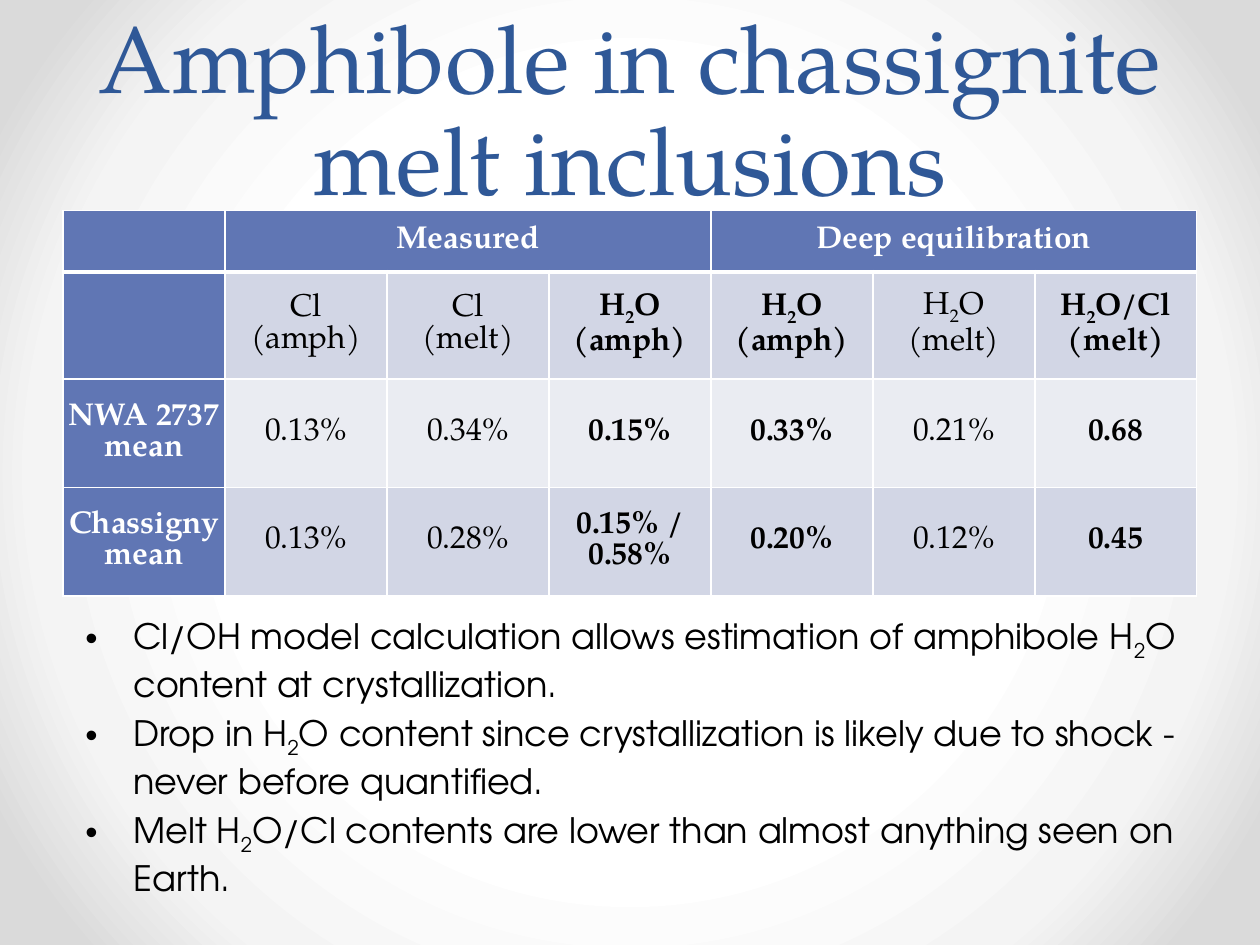
from typing import NamedTuple

from lxml import etree
from pptx import Presentation
from pptx.dml.color import RGBColor
from pptx.enum.text import MSO_ANCHOR, PP_ALIGN
from pptx.oxml import parse_xml
from pptx.oxml.ns import qn
from pptx.util import Inches, Pt

CENTER = PP_ALIGN.CENTER
TOP, MIDDLE, BOTTOM = MSO_ANCHOR.TOP, MSO_ANCHOR.MIDDLE, MSO_ANCHOR.BOTTOM

WHITE = RGBColor(0xFF, 0xFF, 0xFF)
BLACK = RGBColor(0, 0, 0)
TITLE_BLUE = RGBColor(0x2F, 0x58, 0x97)
HEAD_BLUE = RGBColor(0x60, 0x76, 0xB4)
BAND_DARK = RGBColor(0xD2, 0xD6, 0xE5)
BAND_LIGHT = RGBColor(0xEA, 0xEC, 0xF2)

SERIF, SANS = "TeX Gyre Pagella", "TeX Gyre Adventor"
BACKDROP = ((50, WHITE), (76, RGBColor(0xF4, 0xF4, 0xF4)), (92, RGBColor(0xDA, 0xDA, 0xDA)))


class Box(NamedTuple):
    left: float
    top: float
    width: float
    height: float

    def emu(self) -> list:
        return [Inches(v) for v in self]


class Style(NamedTuple):
    name: str
    size: int
    color: RGBColor
    bold: bool = False


TITLE_BOX = Box(0.5, 0, 9, 1.75)
TABLE_BOX = Box(0.5, 1.67, 9, 3.06)
BODY_BOX = Box(0.58, 4.83, 8.92, 2.25)
ROW_HEIGHTS = (0.49, 0.85, 0.86, 0.86)
BOLD_COLUMNS = (3, 4, 6)
INDENT = 0.38

TITLE = "Amphibole in chassignite melt inclusions"
ROWS = (
    ("", "Measured", "", "", "Deep equilibration", "", ""),
    ("", "Cl\n(amph)", "Cl\n(melt)", "H₂O\n(amph)", "H₂O\n(amph)", "H₂O\n(melt)", "H₂O/Cl\n(melt)"),
    ("NWA 2737 mean", "0.13%", "0.34%", "0.15%", "0.33%", "0.21%", "0.68"),
    ("Chassigny mean", "0.13%", "0.28%", "0.15% / 0.58%", "0.20%", "0.12%", "0.45"),
)
BULLETS = (
    "Cl/OH model calculation allows estimation of amphibole H₂O content at crystallization.",
    "Drop in H₂O content since crystallization is likely due to shock - never before quantified.",
    "Melt H₂O/Cl contents are lower than almost anything seen on Earth.",
)


def add_background(s) -> None:
    stops = "".join(f'<a:gs pos="{pos * 1000}"><a:srgbClr val="{color}"/></a:gs>'
                    for pos, color in BACKDROP)
    s.element.cSld.insert(0, parse_xml(
        '<p:bg xmlns:p="http://schemas.openxmlformats.org/presentationml/2006/main"'
        ' xmlns:a="http://schemas.openxmlformats.org/drawingml/2006/main">'
        f'<p:bgPr><a:gradFill rotWithShape="1"><a:gsLst>{stops}</a:gsLst>'
        '<a:path path="circle"><a:fillToRect l="50000" t="50000" r="50000" b="50000"/></a:path>'
        '</a:gradFill><a:effectLst/></p:bgPr></p:bg>'))


def add_run(p, text: str, style: Style):
    r = p.add_run()
    r.text = text
    for key, value in style._asdict().items():
        if key == "color":
            r.font.color.rgb = value
        else:
            setattr(r.font, key, Pt(value) if key == "size" else value)
    return r


def write(p, text: str, style: Style, **fmt) -> None:
    """Fill a paragraph, setting each ₂ as a true subscript run."""
    for key, value in fmt.items():
        setattr(p, key, value)
    for i, part in enumerate(text.split("₂")):
        if i:
            add_run(p, "2", style).font._element.set("baseline", "-25000")
        add_run(p, part, style)


def add_text_frame(s, box: Box, anchor):
    tf = s.shapes.add_textbox(*box.emu()).text_frame
    tf.word_wrap = True
    tf.vertical_anchor = anchor
    return tf


def add_bullet(p) -> None:
    pPr = p._p.get_or_add_pPr()
    pPr.set("marL", str(Inches(INDENT)))
    pPr.set("indent", str(-Inches(INDENT)))
    etree.SubElement(pPr, qn("a:buFont")).set("typeface", "Arial")
    etree.SubElement(pPr, qn("a:buChar")).set("char", "•")


def set_borders(cell, bottom: int) -> None:
    """White borders; they must precede the cell's fill in the XML."""
    tcPr = cell._tc.get_or_add_tcPr()
    for side, width in (("L", 1), ("R", 1), ("T", 1), ("B", bottom)):
        ln = etree.SubElement(tcPr, qn(f"a:ln{side}"), w=str(Pt(width)))
        fill = etree.SubElement(ln, qn("a:solidFill"))
        etree.SubElement(fill, qn("a:srgbClr"), val=str(WHITE))


def fill_cell(cell, text: str, row: int, col: int) -> None:
    head = row == 0 or col == 0
    set_borders(cell, 3 if row == 0 else 1)
    cell.fill.solid()
    cell.fill.fore_color.rgb = HEAD_BLUE if head else BAND_DARK if row % 2 else BAND_LIGHT
    cell.vertical_anchor = MIDDLE
    cell.margin_left = cell.margin_right = Inches(0.02)
    cell.margin_top = cell.margin_bottom = 0
    style = Style(SERIF, 18, WHITE if head else BLACK, head or col in BOLD_COLUMNS)
    tf = cell.text_frame
    for i, line in enumerate(text.split("\n") if text else ()):
        p = tf.add_paragraph() if i else tf.paragraphs[0]
        write(p, line, style, alignment=CENTER)


def add_data_table(s) -> None:
    table = s.shapes.add_table(len(ROWS), len(ROWS[0]), *TABLE_BOX.emu()).table
    for row, height in zip(table.rows, ROW_HEIGHTS):
        row.height = Inches(height)
    for i, texts in enumerate(ROWS):
        for j, text in enumerate(texts):
            fill_cell(table.cell(i, j), text, i, j)
    for first in (1, 4):
        table.cell(0, first).merge(table.cell(0, first + 2))


def main() -> None:
    prs = Presentation()
    prs.slide_width, prs.slide_height = Inches(10), Inches(7.5)
    s = prs.slides.add_slide(prs.slide_layouts[6])
    add_background(s)

    tf = add_text_frame(s, TITLE_BOX, BOTTOM)
    write(tf.paragraphs[0], TITLE, Style(SERIF, 54, TITLE_BLUE),
          alignment=CENTER, line_spacing=Pt(58))

    tf = add_text_frame(s, BODY_BOX, TOP)
    for i, text in enumerate(BULLETS):
        p = tf.add_paragraph() if i else tf.paragraphs[0]
        p.space_before = Pt(4 if i else 0)
        add_bullet(p)
        write(p, text, Style(SANS, 20, BLACK))

    add_data_table(s)
    prs.save("out.pptx")


if __name__ == "__main__":
    main()
